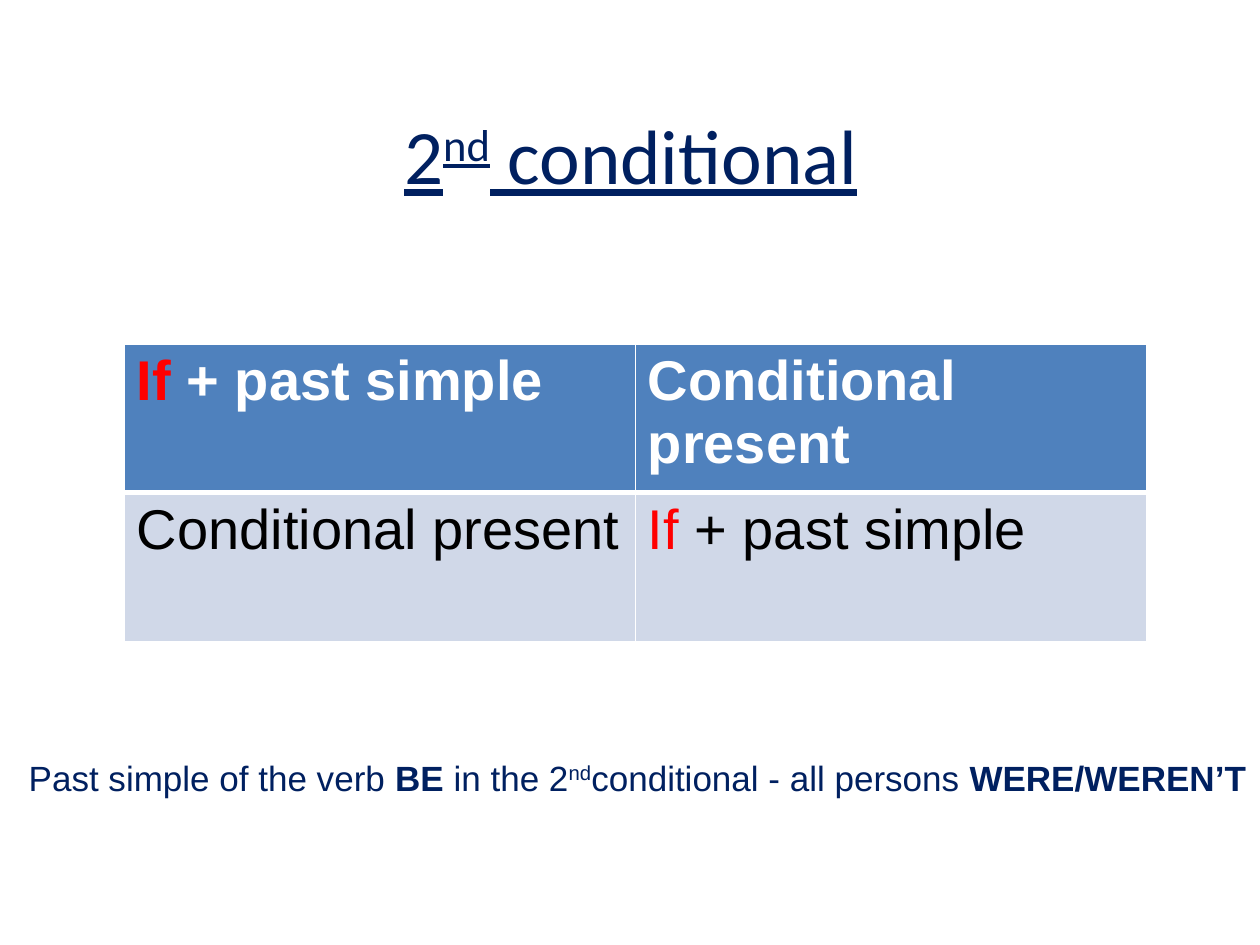
import pptx
import pptx.dml.color
import pptx.enum.text
import pptx.oxml
import pptx.oxml.ns
import pptx.util

Pt = pptx.util.Pt
NAVY, RED, WHITE, BLACK = "002060", "FF0000", "FFFFFF", "000000"
HEADER_FILL, BODY_FILL = "4F81BD", "D0D8E8"


def color(value):
    return pptx.dml.color.RGBColor.from_string(value)


def add_run(paragraph, text, size, value, font="Arial", bold=False, underline=False, raised=False):
    run = paragraph.add_run()
    run.text = text
    run.font.name = font
    run.font.size = Pt(size)
    run.font.bold = bold
    run.font.underline = underline
    run.font.color.rgb = color(value)
    if raised:
        run._r.get_or_add_rPr().set("baseline", "30000")


def add_centered_text(slide, box, anchor):
    frame = slide.shapes.add_textbox(*map(Pt, box)).text_frame
    frame.word_wrap = True
    frame.vertical_anchor = anchor
    paragraph = frame.paragraphs[0]
    paragraph.alignment = pptx.enum.text.PP_ALIGN.CENTER
    return paragraph


def add_title(slide, box):
    paragraph = add_centered_text(slide, box, pptx.enum.text.MSO_ANCHOR.MIDDLE)
    for text, raised in (("2", False), ("nd", True), (" conditional", False)):
        add_run(paragraph, text, 44, NAVY, "Calibri", underline=True, raised=raised)


def set_borders(cell, widths):
    properties = cell._tc.get_or_add_tcPr()
    for side, width in widths.items():
        properties.append(pptx.oxml.parse_xml(
            f'<a:ln{side} {pptx.oxml.ns.nsdecls("a")} w="{Pt(width)}">'
            f'<a:solidFill><a:srgbClr val="{WHITE}"/></a:solidFill></a:ln{side}>'))


def add_pattern_table(slide, box):
    left, top, width, height = box
    condition = (("If ", RED), ("+ past simple", None))
    result = (("Conditional present", None),)
    rows = ((condition, result), (result, condition))
    table = slide.shapes.add_table(2, 2, *map(Pt, box)).table
    for column in table.columns:
        column.width = Pt(width / 2)
    for row_index, contents in enumerate(rows):
        header = row_index == 0
        table.rows[row_index].height = Pt(height / 2)
        borders = {"L": 1, "R": 1, "T": 1 if header else 3, "B": 3 if header else 1}
        for column_index, parts in enumerate(contents):
            cell = table.cell(row_index, column_index)
            set_borders(cell, borders)
            cell.fill.solid()
            cell.fill.fore_color.rgb = color(HEADER_FILL if header else BODY_FILL)
            for text, value in parts:
                add_run(cell.text_frame.paragraphs[0], text, 32,
                        value or (WHITE if header else BLACK), bold=header)


def add_note(slide, box):
    paragraph = add_centered_text(slide, box, pptx.enum.text.MSO_ANCHOR.TOP)
    parts = (
        ("Past simple of the verb ", {}),
        ("BE ", {"bold": True}),
        ("in the 2", {}),
        ("nd", {"raised": True}),
        ("conditional - all persons ", {}),
        ("WERE/WEREN’T", {"bold": True}),
    )
    for text, style in parts:
        add_run(paragraph, text, 20, NAVY, **style)


def main():
    presentation = pptx.Presentation()
    presentation.slide_width, presentation.slide_height = Pt(720), Pt(540)
    slide = presentation.slides.add_slide(presentation.slide_layouts[6])
    add_title(slide, (36.5, 43, 648, 90))
    add_pattern_table(slide, (71, 196.5, 584, 170))
    add_note(slide, (8.5, 428.5, 711.5, 31.5))
    presentation.save("out.pptx")


if __name__ == "__main__":
    main()
